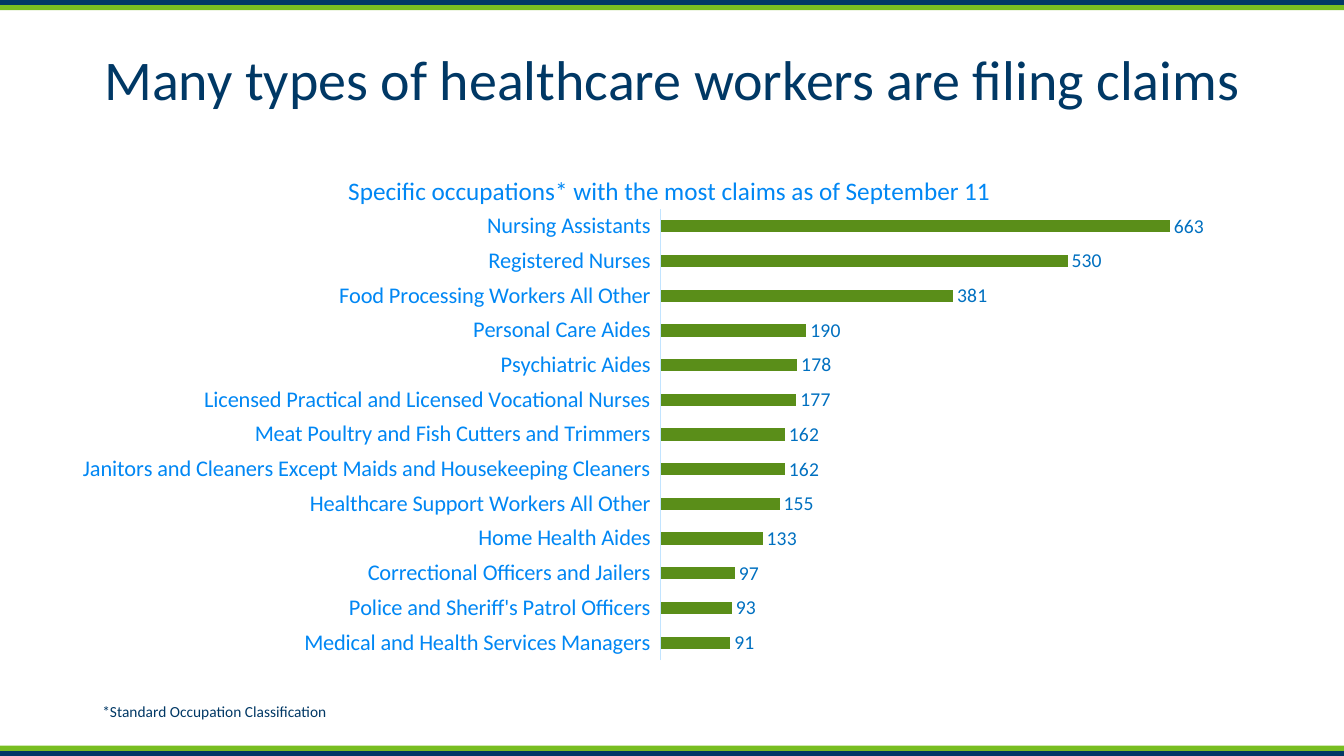
from pptx import Presentation
from pptx.chart.data import CategoryChartData
from pptx.dml.color import RGBColor
from pptx.enum.chart import XL_CHART_TYPE as ChartType, XL_LABEL_POSITION as LabelPosition
from pptx.enum.chart import XL_TICK_LABEL_POSITION as TickLabel, XL_TICK_MARK as TickMark
from pptx.enum.shapes import MSO_SHAPE as Shape
from pptx.enum.text import MSO_ANCHOR as Anchor, PP_ALIGN as Align
from pptx.oxml import parse_xml
from pptx.oxml.ns import nsdecls, qn
from pptx.util import Cm, Pt

NAVY = RGBColor(0x00, 0x38, 0x65)
LIME = RGBColor(0x78, 0xBE, 0x21)
GREEN = RGBColor(0x5A, 0x8E, 0x19)
SKY = RGBColor(0x00, 0x87, 0xF4)
BLUE = RGBColor(0x00, 0x70, 0xC0)
PALE = RGBColor(0xC2, 0xE4, 0xFF)

WIDTH, HEIGHT, STRIPE = 33.87, 19.05, 0.13

CLAIMS = {
    "Medical and Health Services Managers": 91,
    "Police and Sheriff's Patrol Officers": 93,
    "Correctional Officers and Jailers": 97,
    "Home Health Aides": 133,
    "Healthcare Support Workers All Other": 155,
    "Janitors and Cleaners Except Maids and Housekeeping Cleaners": 162,
    "Meat Poultry and Fish Cutters and Trimmers": 162,
    "Licensed Practical and Licensed Vocational Nurses": 177,
    "Psychiatric Aides": 178,
    "Personal Care Aides": 190,
    "Food Processing Workers All Other": 381,
    "Registered Nurses": 530,
    "Nursing Assistants": 663,
}


def apply(target, **values):
    for name, value in values.items():
        setattr(target, name, value)


class SlideBuilder:
    font_name = "Calibri"

    def __init__(self, page):
        self.page = page

    def style(self, font, size, color):
        apply(font, name=self.font_name, size=Pt(size), bold=False)
        font.color.rgb = color

    def stripe(self, top, color):
        bar = self.page.shapes.add_shape(Shape.RECTANGLE, 0, Cm(top), Cm(WIDTH), Cm(STRIPE))
        bar.shadow.inherit = False
        bar.fill.solid()
        bar.fill.fore_color.rgb = color
        bar.line.fill.background()

    def text(self, words, place, size, anchor=Anchor.TOP, **layout):
        box = self.page.shapes.add_textbox(*map(Cm, place))
        apply(box.text_frame, word_wrap=True, vertical_anchor=anchor)
        para = box.text_frame.paragraphs[0]
        apply(para, **layout)
        span = para.add_run()
        span.text = words
        self.style(span.font, size, NAVY)

    def bar_chart(self, title, values, place, plot_area, maximum):
        data = CategoryChartData(number_format="###0")
        data.categories = list(values)
        data.add_series("Series 1", list(values.values()))
        frame = self.page.shapes.add_chart(ChartType.BAR_CLUSTERED, *map(Cm, place), data)
        chart = frame.chart
        apply(chart, has_legend=False, has_title=True)
        self.style(chart.font, 10, NAVY)
        para = chart.chart_title.text_frame.paragraphs[0]
        span = para.add_run()
        span.text = title
        self.style(span.font, 18, SKY)

        jobs = chart.category_axis
        apply(jobs, major_tick_mark=TickMark.NONE, minor_tick_mark=TickMark.NONE,
              tick_label_position=TickLabel.LOW, has_major_gridlines=False)
        self.style(jobs.tick_labels.font, 16, SKY)
        jobs.format.line.color.rgb = PALE
        jobs.format.line.width = Pt(0.75)
        apply(chart.value_axis, visible=False, has_major_gridlines=False,
              minimum_scale=0, maximum_scale=maximum)

        plot = chart.plots[0]
        apply(plot, gap_width=182, vary_by_categories=False, has_data_labels=True)
        apply(plot.data_labels, show_value=True, position=LabelPosition.OUTSIDE_END)
        self.style(plot.data_labels.font, 14, BLUE)
        fill = plot.series[0].format.fill
        fill.solid()
        fill.fore_color.rgb = GREEN
        self.place_plot(chart, plot_area)

    def place_plot(self, chart, plot_area):
        area = chart.element.find(".//" + qn("c:plotArea"))
        for layout in area.findall(qn("c:layout")):
            area.remove(layout)
        sizes = "".join(f'<c:{name} val="{value}"/>' for name, value in zip("xywh", plot_area))
        area.insert(0, parse_xml(
            f'<c:layout {nsdecls("c")}><c:manualLayout><c:layoutTarget val="inner"/>'
            f'<c:xMode val="edge"/><c:yMode val="edge"/>{sizes}</c:manualLayout></c:layout>'))


def main():
    deck = Presentation()
    apply(deck, slide_width=Cm(WIDTH), slide_height=Cm(HEIGHT))
    builder = SlideBuilder(deck.slides.add_slide(deck.slide_layouts[6]))
    for edge, inner in ((0, STRIPE), (HEIGHT - STRIPE, HEIGHT - 2 * STRIPE)):
        builder.stripe(edge, NAVY)
        builder.stripe(inner, LIME)
    builder.text("Many types of healthcare workers are filing claims", (2.33, 1.02, 29.21, 2.1),
                 40, Anchor.MIDDLE, alignment=Align.CENTER, line_spacing=0.9)
    builder.text("*Standard Occupation Classification", (2.33, 17.57, 9.75, 0.73), 11)
    builder.bar_chart("Specific occupations* with the most claims as of September 11", CLAIMS,
                      (0.87, 3.84, 32, 13.33), (0.493, 0.107, 0.484, 0.853), 800)
    deck.save("out.pptx")


if __name__ == "__main__":
    main()
